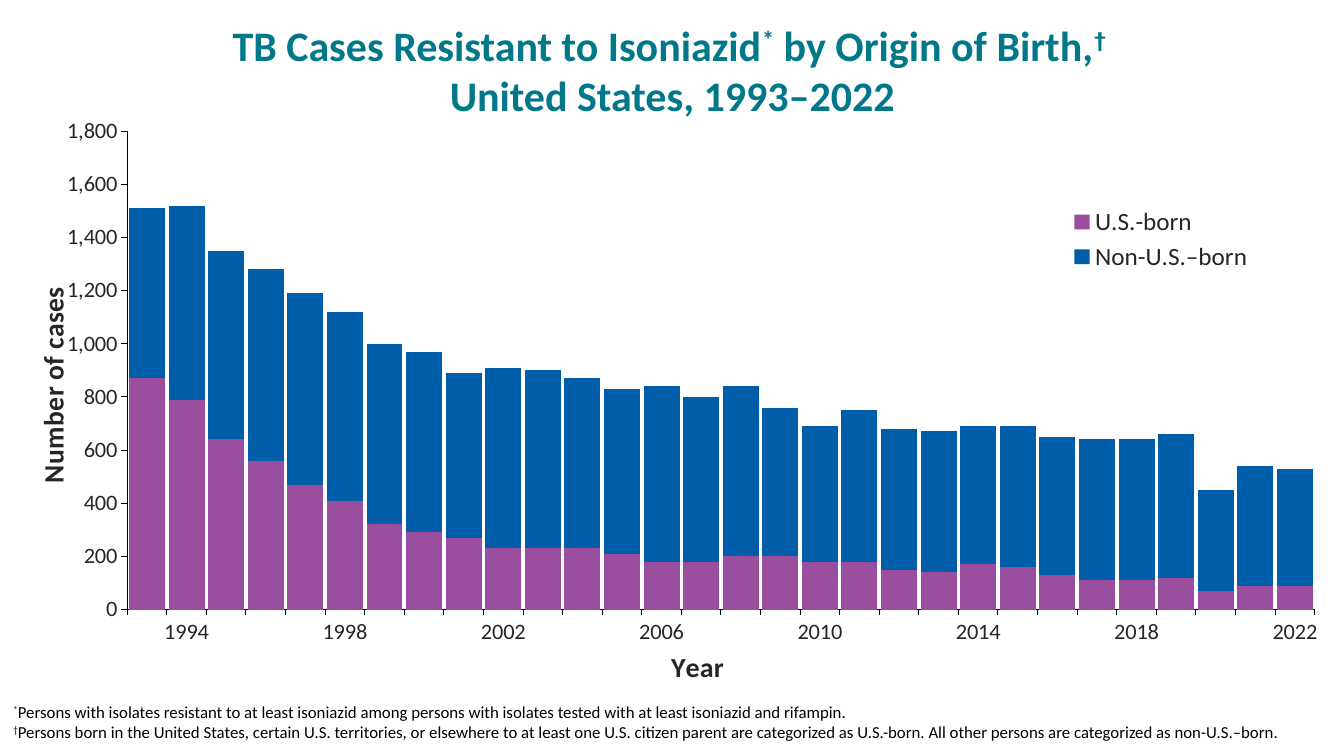
from dataclasses import dataclass

from lxml import etree
from pptx import Presentation
from pptx.chart.data import CategoryChartData
from pptx.dml.color import RGBColor
from pptx.enum.chart import XL_CHART_TYPE as ChartType
from pptx.enum.chart import XL_LEGEND_POSITION as LegendPosition
from pptx.enum.chart import XL_TICK_MARK as TickMark
from pptx.enum.text import MSO_ANCHOR, MSO_AUTO_SIZE, PP_ALIGN
from pptx.oxml import parse_xml
from pptx.oxml.ns import nsdecls, qn
from pptx.util import Inches, Pt


@dataclass(frozen=True)
class Theme:
    font: str = "Calibri"
    symbol_font: str = "Karla"
    teal: RGBColor = RGBColor(0x00, 0x78, 0x8A)
    purple: RGBColor = RGBColor(0x9A, 0x4E, 0x9E)
    blue: RGBColor = RGBColor(0x00, 0x5D, 0xAA)
    gray: RGBColor = RGBColor(0x26, 0x26, 0x26)
    black: RGBColor = RGBColor(0, 0, 0)
    title_size: int = 30
    axis_title_size: int = 20
    legend_size: int = 18
    label_size: int = 16
    note_size: int = 12


theme = Theme()


def style_font(font, size, color, bold=False, name=theme.font):
    font.name, font.size, font.bold = name, Pt(size), bold
    font.color.rgb = color


def chart_layout(x, y, width=None, height=None, inner=False):
    """Manual layout, in fractions of the chart area."""
    layout = parse_xml(f"<c:layout {nsdecls('c')}><c:manualLayout/></c:layout>")
    settings = [("layoutTarget", "inner" if inner else None),
                ("xMode", "edge"), ("yMode", "edge"),
                ("x", x), ("y", y), ("w", width), ("h", height)]
    for tag, value in settings:
        if value is not None:
            etree.SubElement(layout[0], qn(f"c:{tag}")).set("val", str(value))
    return layout


presentation = Presentation()
presentation.slide_width, presentation.slide_height = Inches(13.33), Inches(7.5)
slide = presentation.slides.add_slide(presentation.slide_layouts[5])

# Title
title = slide.shapes.title
title.left, title.top = Inches(0.67), Inches(0.18)
title.width, title.height = Inches(12), Inches(1.06)
title_frame = title.text_frame
title_frame.auto_size = MSO_AUTO_SIZE.NONE
title_frame.vertical_anchor = MSO_ANCHOR.BOTTOM
paragraph = title_frame.paragraphs[0]
paragraph.alignment = PP_ALIGN.CENTER
title_runs = [
    ("TB Cases Resistant to Isoniazid", theme.font, False),
    ("*", theme.font, True),
    (" by Origin of Birth,", theme.font, False),
    ("† ", theme.symbol_font, True),
    ("United States, 1993–2022", theme.font, False),
]
for text, font_name, raised in title_runs:
    if text.startswith("United"):
        paragraph.add_line_break()
    run = paragraph.add_run()
    run.text = text
    style_font(run.font, theme.title_size, theme.teal, True, font_name)
    if raised:
        run._r.get_or_add_rPr().set("baseline", "30000")

# Chart data: every fourth year is labelled
series_data = [
    ("U.S.-born", theme.purple,
     [870, 790, 640, 560, 470, 410, 320, 290, 270, 230, 230, 230, 210, 180, 180,
      200, 200, 180, 180, 150, 140, 170, 160, 130, 110, 110, 120, 70, 90, 90]),
    ("Non-U.S.–born", theme.blue,
     [640, 730, 710, 720, 720, 710, 680, 680, 620, 680, 670, 640, 620, 660, 620,
      640, 560, 510, 570, 530, 530, 520, 530, 520, 530, 530, 540, 380, 450, 440]),
]
chart_data = CategoryChartData()
chart_data.categories = [str(year) if year % 4 == 2 else ""
                         for year in range(1993, 2023)]
for name, color, values in series_data:
    chart_data.add_series(name, values)

# Stacked columns
chart = slide.shapes.add_chart(
    ChartType.COLUMN_STACKED, Inches(0.17), Inches(1.11),
    Inches(13.16), Inches(5.77), chart_data).chart
style_font(chart.font, 10, theme.black)
chart.has_title = False
plot = chart.plots[0]
plot.gap_width, plot.overlap = 10, 100
plot.vary_by_categories = False
for series, (name, color, values) in zip(plot.series, series_data):
    series.format.fill.solid()
    series.format.fill.fore_color.rgb = color
plot_area = chart._chartSpace.chart.plotArea
for old_layout in plot_area.findall(qn("c:layout")):
    plot_area.remove(old_layout)
plot_area.insert(0, chart_layout(0.083, 0.034, 0.895, 0.836, inner=True))

# Axes
axes = [(chart.category_axis, "Year", 0.489, 0.928),
        (chart.value_axis, "Number of cases", 0.008, 0.303)]
for axis, axis_title, x, y in axes:
    axis.has_major_gridlines = False
    axis.major_tick_mark = TickMark.OUTSIDE
    axis.minor_tick_mark = TickMark.NONE
    axis.format.line.color.rgb = theme.black
    axis.format.line.width = Pt(0.75)
    style_font(axis.tick_labels.font, theme.label_size, theme.gray)
    run = axis.axis_title.text_frame.paragraphs[0].add_run()
    run.text = axis_title
    style_font(run.font, theme.axis_title_size, theme.gray, True)
    title_element = axis.axis_title._element
    for old_layout in title_element.findall(qn("c:layout")):
        title_element.remove(old_layout)
    title_element.find(qn("c:tx")).addnext(chart_layout(x, y))
value_axis = chart.value_axis
value_axis.minimum_scale, value_axis.maximum_scale = 0, 1800
value_axis.major_unit = 200
value_axis.tick_labels.number_format = "#,##0"
value_axis.tick_labels.number_format_is_linked = False
label_skip = parse_xml(f'<c:tickLblSkip {nsdecls("c")} val="1"/>')
chart.category_axis._element.find(qn("c:noMultiLvlLbl")).addprevious(label_skip)

# Legend
chart.has_legend = True
legend = chart.legend
legend.position = LegendPosition.TOP
legend.include_in_layout = False
style_font(legend.font, theme.legend_size, theme.gray)
for old_layout in legend._element.findall(qn("c:layout")):
    legend._element.remove(old_layout)
legend._element.find(qn("c:legendPos")).addnext(
    chart_layout(0.787, 0.158, 0.15, 0.13))

# Footnotes
notes = [
    ("*", "Persons with isolates resistant to at least isoniazid among persons "
          "with isolates tested with at least isoniazid and rifampin."),
    ("†", "Persons born in the United States, certain U.S. territories, or "
          "elsewhere to at least one U.S. citizen parent are categorized as "
          "U.S.-born. All other persons are categorized as non-U.S.–born."),
]
note_frame = slide.shapes.add_textbox(
    Inches(0), Inches(6.89), Inches(13.33), Inches(0.35)).text_frame
note_frame.word_wrap = True
note_frame.margin_left = note_frame.margin_right = Inches(0.13)
note_frame.margin_top = note_frame.margin_bottom = Inches(0.07)
for index, (mark, text) in enumerate(notes):
    paragraph = note_frame.add_paragraph() if index else note_frame.paragraphs[0]
    for content in (mark, text):
        run = paragraph.add_run()
        run.text = content
        style_font(run.font, theme.note_size, theme.black)
        if content == mark:
            run._r.get_or_add_rPr().set("baseline", "30000")

presentation.save("out.pptx")
